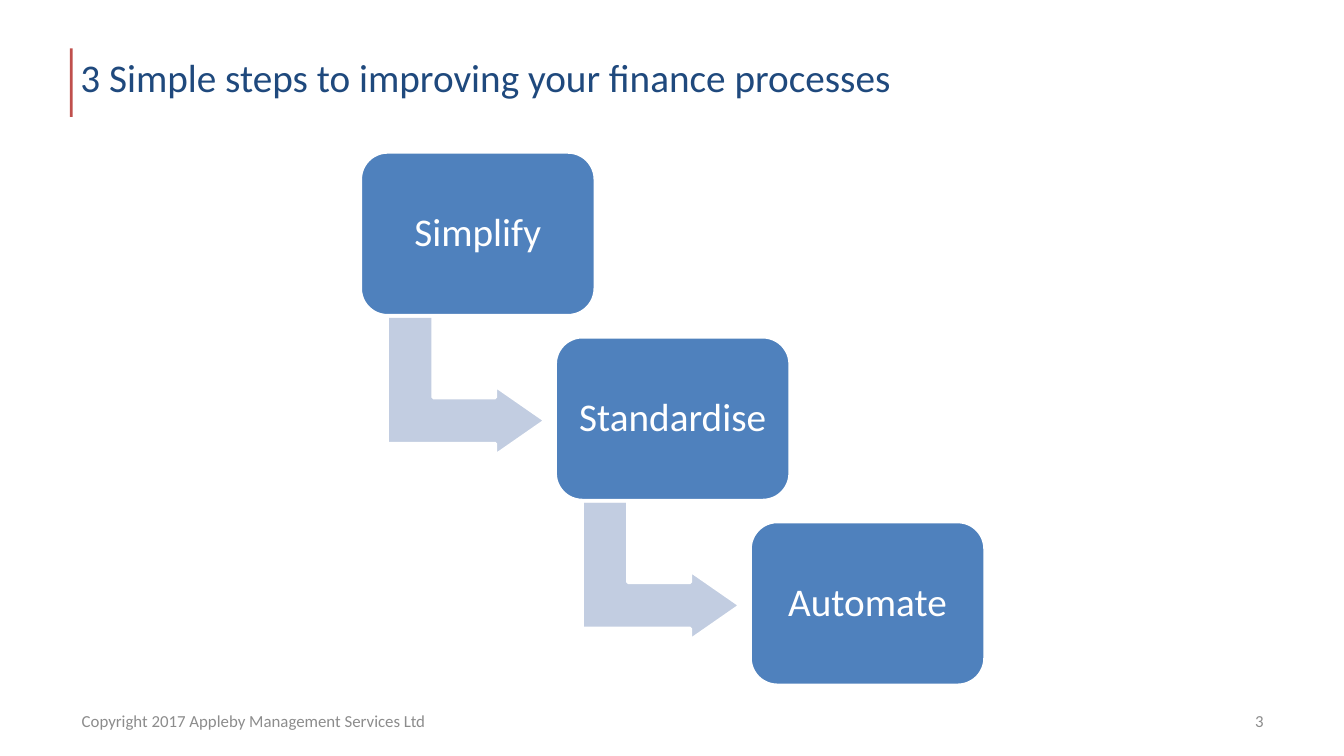
from pptx import Presentation
from pptx.dml.color import RGBColor
from pptx.enum.shapes import MSO_SHAPE
from pptx.enum.text import MSO_ANCHOR, PP_ALIGN
from pptx.util import Inches, Pt

STEPS = ["Simplify", "Standardise", "Automate"]
STEP_W, STEP_H = 1.75, 1.22
ARROW_W, ARROW_H = 1.04, 1.18
NAVY, RED, BLUE, PALE, GREY, WHITE = (
    "1F497D", "C0504D", "4F81BD", "C2CDE1", "8C8C8C", "FFFFFF")


def color(value):
    return RGBColor.from_string(value)


def write(shape, text, size=21, fill=WHITE, align=PP_ALIGN.LEFT,
          anchor=MSO_ANCHOR.MIDDLE, inset=0.1, spacing=None):
    frame = shape.text_frame
    frame.word_wrap = True
    frame.vertical_anchor = anchor
    frame.margin_left = frame.margin_right = Inches(inset)
    frame.margin_top = frame.margin_bottom = Inches(0.05)
    para = frame.paragraphs[0]
    para.alignment = align
    para.line_spacing = spacing
    run = para.add_run()
    run.text = text
    run.font.name = "Calibri"
    run.font.size = Pt(size)
    run.font.color.rgb = color(fill)


def add_text(slide, text, left, top, width, height, **style):
    box = slide.shapes.add_textbox(*map(Inches, (left, top, width, height)))
    write(box, text, **style)


def add_block(slide, kind, left, top, width, height, fill, outline=None):
    shape = slide.shapes.add_shape(
        kind, *map(Inches, (left, top, width, height)))
    shape.shadow.inherit = False
    shape.fill.solid()
    shape.fill.fore_color.rgb = color(fill)
    if outline:
        shape.line.color.rgb = color(outline)
        shape.line.width = Pt(2)
    else:
        shape.line.fill.background()
    return shape


def add_title(slide, left, top, width, height):
    add_block(slide, MSO_SHAPE.RECTANGLE, left + 0.02, top + 0.01,
              0.02, 0.51, RED)
    add_text(slide, "3 Simple steps to improving your finance processes",
             left, top, width, height, fill=NAVY, anchor=MSO_ANCHOR.TOP)


def add_steps(slide, left, top, width, height):
    """Spread the steps evenly down the diagonal, with an arrow between each."""
    gaps = len(STEPS) - 1
    across = (width - STEP_W) / gaps
    down = (height - STEP_H) / gaps
    for index, name in enumerate(STEPS):
        x, y = left + index * across, top + index * down
        if index < gaps:
            arrow = add_block(slide, MSO_SHAPE.BENT_UP_ARROW, x + 0.27,
                              y + 1.15, ARROW_W, ARROW_H, PALE, WHITE)
            arrow.rotation = 90
            for spot, value in enumerate((0.33, 0.25, 0.36)):
                arrow.adjustments[spot] = value
        step = add_block(slide, MSO_SHAPE.ROUNDED_RECTANGLE, x, y,
                         STEP_W, STEP_H, BLUE, WHITE)
        write(step, name, align=PP_ALIGN.CENTER, spacing=0.9)


def add_footer(slide, left, top, width, height):
    add_text(slide, "Copyright 2017 Appleby Management Services Ltd",
             left, top, 3.17, height, size=9, fill=GREY)
    add_text(slide, "3", left + width - 2.33, top, 2.33, height,
             size=9, fill=GREY, align=PP_ALIGN.RIGHT)


def main():
    deck = Presentation()
    deck.slide_width = Inches(10)
    deck.slide_height = deck.slide_width * 9 // 16
    slide = deck.slides.add_slide(deck.slide_layouts[6])
    add_title(slide, 0.5, 0.35, 8.69, 0.68)
    add_steps(slide, 2.68, 1.13, 4.65, 3.97)
    add_footer(slide, 0.51, 5.21, 8.99, 0.3)
    deck.save("out.pptx")


if __name__ == "__main__":
    main()
